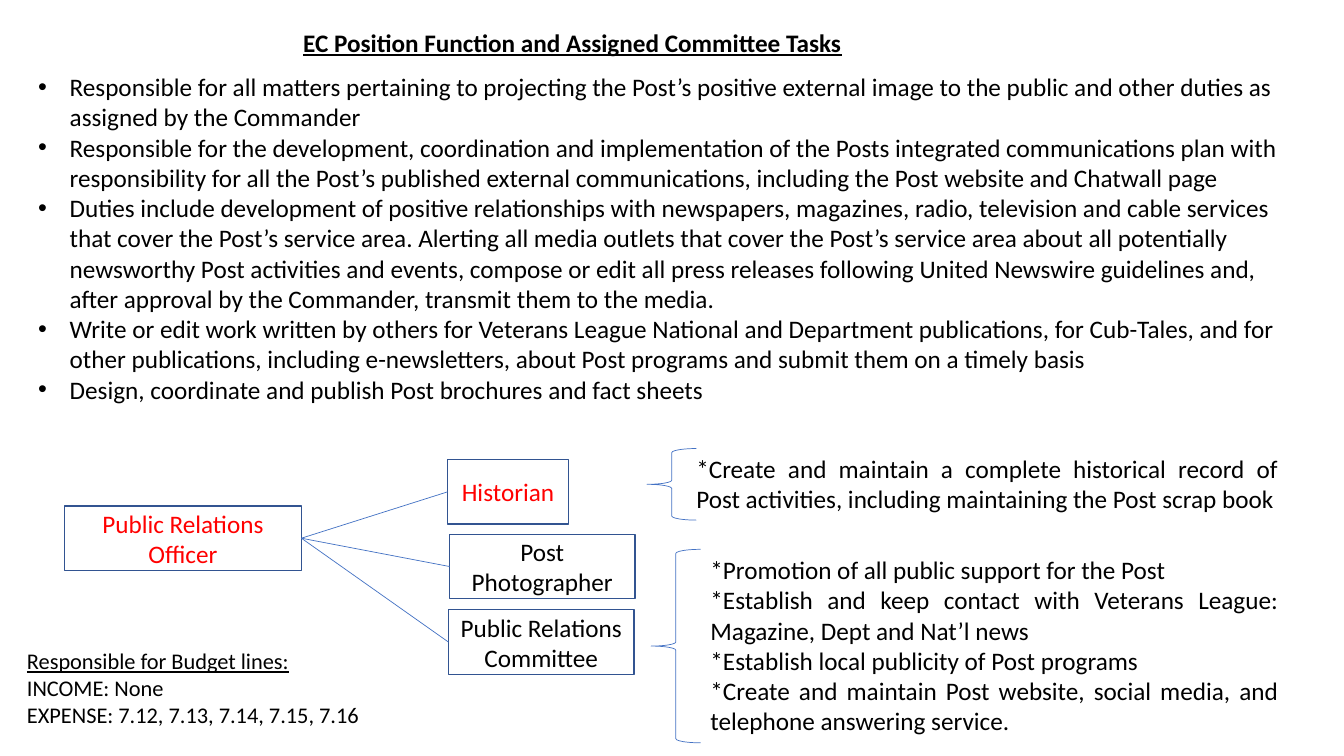
from lxml import etree
from pptx import Presentation
from pptx.dml.color import RGBColor
from pptx.enum.shapes import MSO_CONNECTOR, MSO_SHAPE
from pptx.enum.text import MSO_ANCHOR, MSO_AUTO_SIZE, PP_ALIGN
from pptx.oxml.ns import qn
from pptx.util import Pt

RECTANGLE = MSO_SHAPE.RECTANGLE
LEFT_BRACE = MSO_SHAPE.LEFT_BRACE
STRAIGHT = MSO_CONNECTOR.STRAIGHT
MIDDLE = MSO_ANCHOR.MIDDLE
GROW = MSO_AUTO_SIZE.SHAPE_TO_FIT_TEXT
LEFT, CENTER, JUSTIFY = PP_ALIGN.LEFT, PP_ALIGN.CENTER, PP_ALIGN.JUSTIFY

BLACK, RED, BOX_BLUE, LINE_BLUE = "000000", "FF0000", "325491", "4472C4"
LEFT_SITE, RIGHT_SITE = 1, 3
BOX_HEIGHT = 46.1
BULLET_INDENT = 22.5

DUTIES = [
    "Responsible for all matters pertaining to projecting the Post’s positive external image "
    "to the public and other duties as assigned by the Commander",
    "Responsible for the development, coordination and implementation of the Posts integrated "
    "communications plan with responsibility for all the Post’s published external "
    "communications, including the Post website and Chatwall page",
    "Duties include development of positive relationships with newspapers, magazines, radio, "
    "television and cable services that cover the Post’s service area. Alerting all media "
    "outlets that cover the Post’s service area about all potentially newsworthy Post "
    "activities and events, compose or edit all press releases following United Newswire "
    "guidelines and, after approval by the Commander, transmit them to the media.",
    "Write or edit work written by others for Veterans League National and Department "
    "publications, for Cub-Tales, and for other publications, including e-newsletters, about "
    "Post programs and submit them on a timely basis",
    "Design, coordinate and publish Post brochures and fact sheets",
]
HISTORIAN_TASKS = [
    "*Create and maintain a complete historical record of Post activities, "
    "including maintaining the Post scrap book",
]
COMMITTEE_TASKS = [
    "*Promotion of all public support for the Post",
    "*Establish and keep contact with Veterans League: Magazine, Dept and Nat’l news",
    "*Establish local publicity of Post programs",
    "*Create and maintain Post website, social media, and telephone answering service.",
]
BUDGET_LINES = ["INCOME: None", "EXPENSE: 7.12, 7.13, 7.14, 7.15, 7.16"]
ROLES = [
    ("Historian", (319.7, 328.3, 86.4, BOX_HEIGHT), RED),
    ("Post Photographer", (321.1, 381.6, 132.5, BOX_HEIGHT), BLACK),
    ("Public Relations Committee", (320.4, 435.6, 132.5, BOX_HEIGHT), BLACK),
]


def color(value):
    """Turn a hex string into a colour."""
    return RGBColor.from_string(value)


class SlideBuilder:
    """Hold the text style and the current slide."""

    def __init__(self, slide):
        """Set the slide and its base font format."""
        self.slide = slide
        self.font_format = {"name": "Calibri", "size": Pt(18)}

    def outline(self, shape, line_color, width):
        """Give a shape or connector its line."""
        shape.line.color.rgb = color(line_color)
        shape.line.width = Pt(width)

    def add_run(self, paragraph, text, font_color=BLACK, align=LEFT, **changes):
        """Add one formatted run to a paragraph."""
        paragraph.alignment = align
        run = paragraph.add_run()
        run.text = text
        for name, value in {**self.font_format, **changes}.items():
            setattr(run.font, name, value)
        run.font.color.rgb = color(font_color)

    def bullet(self, paragraph):
        """Give a paragraph a hanging round bullet."""
        properties = paragraph._p.get_or_add_pPr()
        properties.set("marL", str(Pt(BULLET_INDENT)))
        properties.set("indent", str(-Pt(BULLET_INDENT)))
        etree.SubElement(properties, qn("a:buFont")).set("typeface", "Arial")
        etree.SubElement(properties, qn("a:buChar")).set("char", "•")

    def text(self, place, lines, align=LEFT, wrap=True, bullets=False, heading=None, **changes):
        """Add a text box with an optional underlined heading."""
        frame = self.slide.shapes.add_textbox(*map(Pt, place)).text_frame
        frame.word_wrap = wrap
        frame.auto_size = GROW
        formats = [(line, changes) for line in lines]
        if heading:
            formats.insert(0, (heading, {**changes, "underline": True}))
        for index, (line, line_format) in enumerate(formats):
            paragraph = frame.add_paragraph() if index else frame.paragraphs[0]
            self.add_run(paragraph, line, align=align, **line_format)
            if bullets:
                self.bullet(paragraph)

    def shape(self, kind, place, line_color, width):
        """Add an unfilled preset shape."""
        shape = self.slide.shapes.add_shape(kind, *map(Pt, place))
        shape.shadow.inherit = False
        shape.fill.background()
        self.outline(shape, line_color, width)
        return shape

    def box(self, text, place, font_color):
        """Add a labelled role box."""
        box = self.shape(RECTANGLE, place, BOX_BLUE, 1)
        box.text_frame.word_wrap = True
        box.text_frame.vertical_anchor = MIDDLE
        self.add_run(box.text_frame.paragraphs[0], text, font_color, CENTER)
        return box

    def brace(self, place):
        """Add a left brace."""
        self.shape(LEFT_BRACE, place, LINE_BLUE, 0.5)

    def link(self, source, target):
        """Join the right side of one box to the left side of another."""
        connector = self.slide.shapes.add_connector(STRAIGHT, 0, 0, 0, 0)
        connector.begin_connect(source, RIGHT_SITE)
        connector.end_connect(target, LEFT_SITE)
        self.outline(connector, LINE_BLUE, 0.5)
        etree.SubElement(connector._element.spPr, qn("a:effectLst"))


def main():
    """Build and save the slide."""
    presentation = Presentation()
    presentation.slide_width, presentation.slide_height = Pt(960), Pt(540)
    builder = SlideBuilder(presentation.slides.add_slide(presentation.slide_layouts[6]))

    builder.text((209.5, 15.8, 402.5, 29), ["EC Position Function and Assigned Committee Tasks"],
                 wrap=False, bold=True, underline=True)
    builder.text((20.2, 47.5, 919.4, 247), DUTIES, bullets=True)

    officer = builder.box("Public Relations Officer", (46.1, 361.4, 169.2, BOX_HEIGHT), RED)
    for role, place, font_color in ROLES:
        builder.link(officer, builder.box(role, place, font_color))

    builder.brace((462.2, 320.4, 35.3, 51.1))
    builder.text((490.3, 320.4, 429.8, 51.1), HISTORIAN_TASKS, JUSTIFY)
    builder.brace((465.1, 392.4, 35.3, 138.2))
    builder.text((500.4, 392.4, 419.8, 138.2), COMMITTEE_TASKS, JUSTIFY)
    builder.text((12.2, 458.6, 434.2, 65.5), BUDGET_LINES,
                 heading="Responsible for Budget lines:", size=Pt(16))
    presentation.save("out.pptx")


if __name__ == "__main__":
    main()
